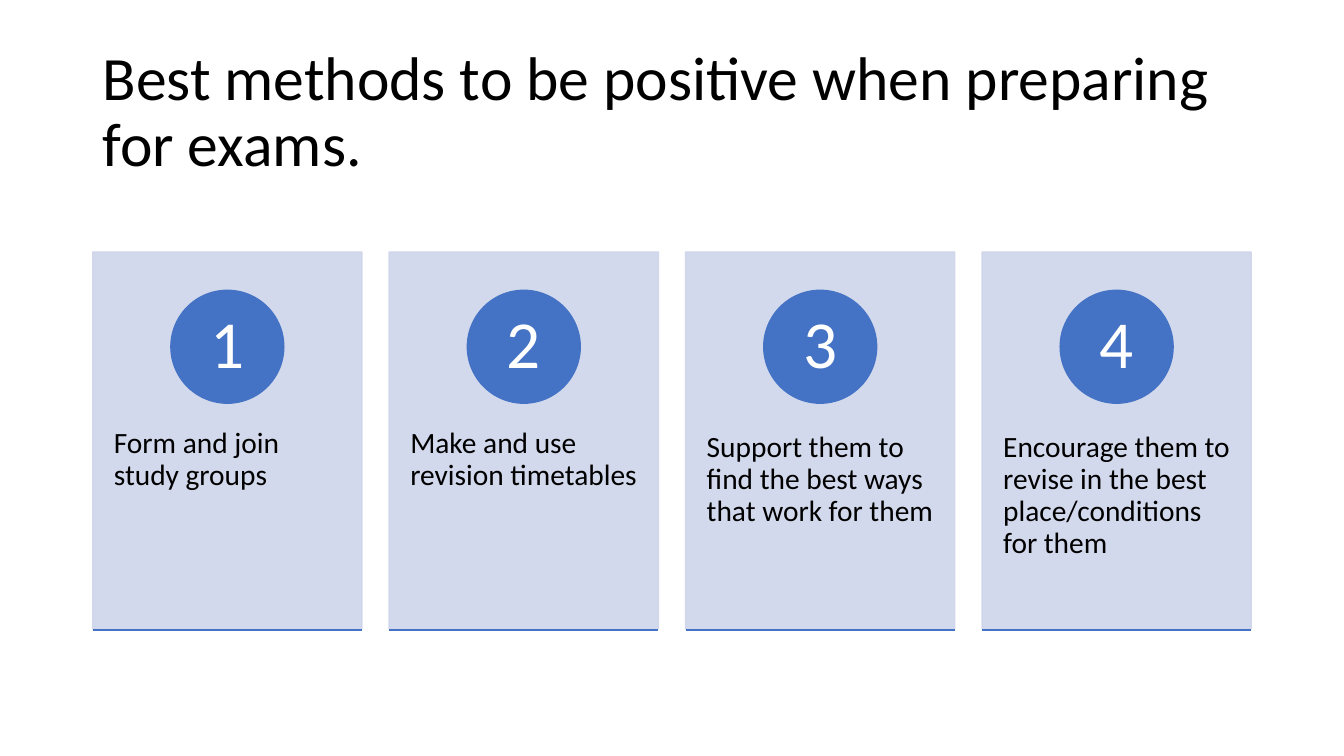
"""Build a slide with four numbered cards on preparing for exams."""
from lxml import etree
from pptx import Presentation
from pptx import util as u
from pptx.dml.color import RGBColor
from pptx.enum import shapes, text
from pptx.oxml.ns import qn

TITLE = "Best methods to be positive when preparing for exams."
METHODS = [
    "Form and join study groups",
    "Make and use revision timetables",
    "Support them to find the best ways that work for them",
    "Encourage them to revise in the best place/conditions for them",
]
COLORS = {"card": "CFD5EA", "accent": "4472C4", "ink": "000000", "white": "FFFFFF"}
FONT = "Calibri"
LEFT, TOP, CARD_W, CARD_H, PITCH = 0.92, 2.5, 2.67, 3.74, 2.94
CIRCLE, CIRCLE_TOP = 1.12, 2.88
BODY_TOP, BODY_H = 3.93, 2.25


def rgb(name):
    return RGBColor.from_string(COLORS[name])


def set_alpha(fill_xml, percent):
    color = fill_xml.find(".//" + qn("a:srgbClr"))
    etree.SubElement(color, qn("a:alpha")).set("val", str(percent * 1000))


def add_filled(slide, kind, box, color):
    sp = slide.shapes.add_shape(kind, *map(u.Inches, box))
    sp.shadow.inherit = False
    sp.fill.solid()
    sp.fill.fore_color.rgb = rgb(color)
    sp.line.color.rgb = rgb(color)
    sp.line.width = u.Pt(1)
    return sp


def write(sp, content, size, color="ink", align=text.PP_ALIGN.LEFT,
          anchor=text.MSO_ANCHOR.TOP, inset=(0.1, 0.05)):
    tf = sp.text_frame
    tf.word_wrap = True
    tf.vertical_anchor = anchor
    tf.margin_left = tf.margin_right = u.Inches(inset[0])
    tf.margin_top = tf.margin_bottom = u.Inches(inset[1])
    p = tf.paragraphs[0]
    p.alignment = align
    p.line_spacing = 0.9
    r = p.add_run()
    r.text = content
    r.font.name = FONT
    r.font.size = u.Pt(size)
    r.font.color.rgb = rgb(color)


def add_card(slide, index, method):
    x = LEFT + index * PITCH
    card = add_filled(slide, shapes.MSO_SHAPE.RECTANGLE, (x, TOP, CARD_W, CARD_H), "card")
    for part in (card.fill, card.line.fill):
        set_alpha(part._xPr, 90)

    body = slide.shapes.add_textbox(*map(u.Inches, (x, BODY_TOP, CARD_W, BODY_H)))
    write(body, method, 21, inset=(0.21, 0.36))

    circle_box = (x + (CARD_W - CIRCLE) / 2, CIRCLE_TOP, CIRCLE, CIRCLE)
    circle = add_filled(slide, shapes.MSO_SHAPE.OVAL, circle_box, "accent")
    write(circle, str(index + 1), 48, "white", text.PP_ALIGN.CENTER,
          text.MSO_ANCHOR.MIDDLE, (0.09, 0.01))

    y = TOP + CARD_H + 0.01
    rule = slide.shapes.add_connector(
        shapes.MSO_CONNECTOR.STRAIGHT, *map(u.Inches, (x, y, x + CARD_W, y)))
    rule.line.color.rgb = rgb("accent")
    rule.line.width = u.Pt(1)
    etree.SubElement(rule._element.spPr, qn("a:effectLst"))


def main():
    prs = Presentation()
    prs.slide_width, prs.slide_height = u.Inches(13.33), u.Inches(7.5)
    slide = prs.slides.add_slide(prs.slide_layouts[6])
    title = slide.shapes.add_textbox(*map(u.Inches, (LEFT, 0.4, 11.5, 1.45)))
    write(title, TITLE, 44, anchor=text.MSO_ANCHOR.MIDDLE)
    for index, method in enumerate(METHODS):
        add_card(slide, index, method)
    prs.save("out.pptx")


if __name__ == "__main__":
    main()
